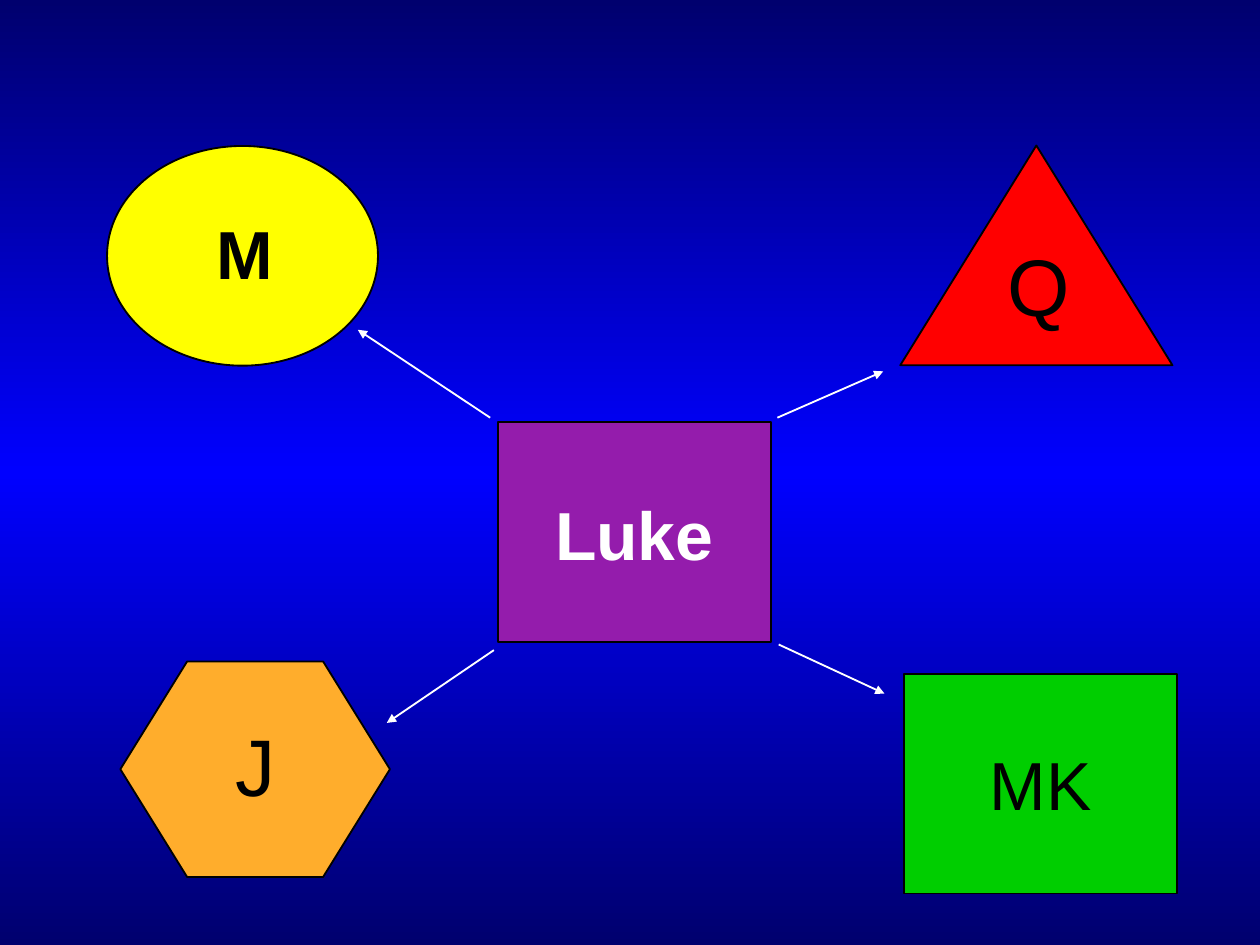
import pptx
import pptx.util
import pptx.dml.color
import pptx.enum.shapes
import pptx.enum.text
import pptx.oxml.ns
import lxml.etree

SHAPES = pptx.enum.shapes.MSO_SHAPE
COLORS = {
    "navy": "00006E", "blue": "0000FF", "purple": "941CAC", "yellow": "FFFF00",
    "red": "FF0000", "orange": "FFAD2C", "green": "00CE00",
    "black": "000000", "white": "FFFFFF",
}
OUTLINE = pptx.util.Pt(1.19)

deck = pptx.Presentation()
deck.slide_width = pptx.util.Cm(28.8)
deck.slide_height = pptx.util.Cm(21.6)
slide = deck.slides.add_slide(deck.slide_layouts[6])


def rgb(name):
    return pptx.dml.color.RGBColor.from_string(COLORS[name])


def share(x, y):
    """Turn percentages of the slide's width and height into lengths."""
    return int(deck.slide_width * x / 100), int(deck.slide_height * y / 100)


# Background: navy at the top and bottom, bright blue in the middle
backdrop = slide.background.fill
backdrop.gradient()
backdrop.gradient_angle = 270
stops = backdrop._fill._gradFill.find(pptx.oxml.ns.qn("a:gsLst"))
for stop in list(stops):
    stops.remove(stop)
for position, color in ((0, "navy"), (50, "blue"), (100, "navy")):
    stop = lxml.etree.SubElement(stops, pptx.oxml.ns.qn("a:gs"), pos=str(position * 1000))
    lxml.etree.SubElement(stop, pptx.oxml.ns.qn("a:srgbClr"), val=COLORS[color])

# Luke and the four sources: label, outline, left, top, width, height (percent),
# fill, text color, size, bold, left, top and bottom inset (inches)
sources = [
    ("Luke", SHAPES.RECTANGLE, 39.5, 44.7, 21.7, 23.2, "purple", "white", 44, True, 0, 0.08, 0),
    ("M", SHAPES.OVAL, 8.5, 15.45, 21.5, 23.25, "yellow", "black", 44, True, 0.04, 0, 0),
    ("Q", SHAPES.ISOSCELES_TRIANGLE, 71.45, 15.4, 21.6, 23.25, "red", "black", 52, False, 0.04, 0, 0.38),
    ("J", SHAPES.HEXAGON, 9.55, 70, 21.4, 22.8, "orange", "black", 52, False, 0, 0, 0),
    ("MK", SHAPES.RECTANGLE, 71.75, 71.35, 21.7, 23.2, "green", "black", 44, False, 0, 0.06, 0),
]
for label, outline, left, top, width, height, fill, ink, size, bold, before, above, below in sources:
    source = slide.shapes.add_shape(outline, *share(left, top), *share(width, height))
    source.shadow.inherit = False
    source.fill.solid()
    source.fill.fore_color.rgb = rgb(fill)
    source.line.color.rgb = rgb("black")
    source.line.width = OUTLINE
    if outline == SHAPES.HEXAGON:
        source.adjustments[0] = 0.31
    frame = source.text_frame
    frame.margin_left = pptx.util.Inches(before)
    frame.margin_right = 0
    frame.margin_top = pptx.util.Inches(above)
    frame.margin_bottom = pptx.util.Inches(below)
    frame.vertical_anchor = pptx.enum.text.MSO_ANCHOR.MIDDLE
    paragraph = frame.paragraphs[0]
    paragraph.text = label
    paragraph.alignment = pptx.enum.text.PP_ALIGN.CENTER
    paragraph.line_spacing = 0.97 if size == 44 else 0.95
    paragraph.font.name = "Arial"
    paragraph.font.size = pptx.util.Pt(size)
    paragraph.font.bold = bold
    paragraph.font.color.rgb = rgb(ink)

# Arrows from Luke out to each source
arrows = [
    ((38.9, 44.2), (28.4, 34.9)),
    ((61.7, 44.2), (70.1, 39.3)),
    ((39.2, 68.8), (30.7, 76.5)),
    ((61.8, 68.2), (70.2, 73.4)),
]
for start, end in arrows:
    arrow = slide.shapes.add_connector(
        pptx.enum.shapes.MSO_CONNECTOR.STRAIGHT, *share(*start), *share(*end))
    arrow.line.color.rgb = rgb("white")
    arrow.line.width = OUTLINE
    lxml.etree.SubElement(arrow.line._get_or_add_ln(), pptx.oxml.ns.qn("a:tailEnd"), type="triangle")
    lxml.etree.SubElement(arrow._element.spPr, pptx.oxml.ns.qn("a:effectLst"))

deck.save("out.pptx")
